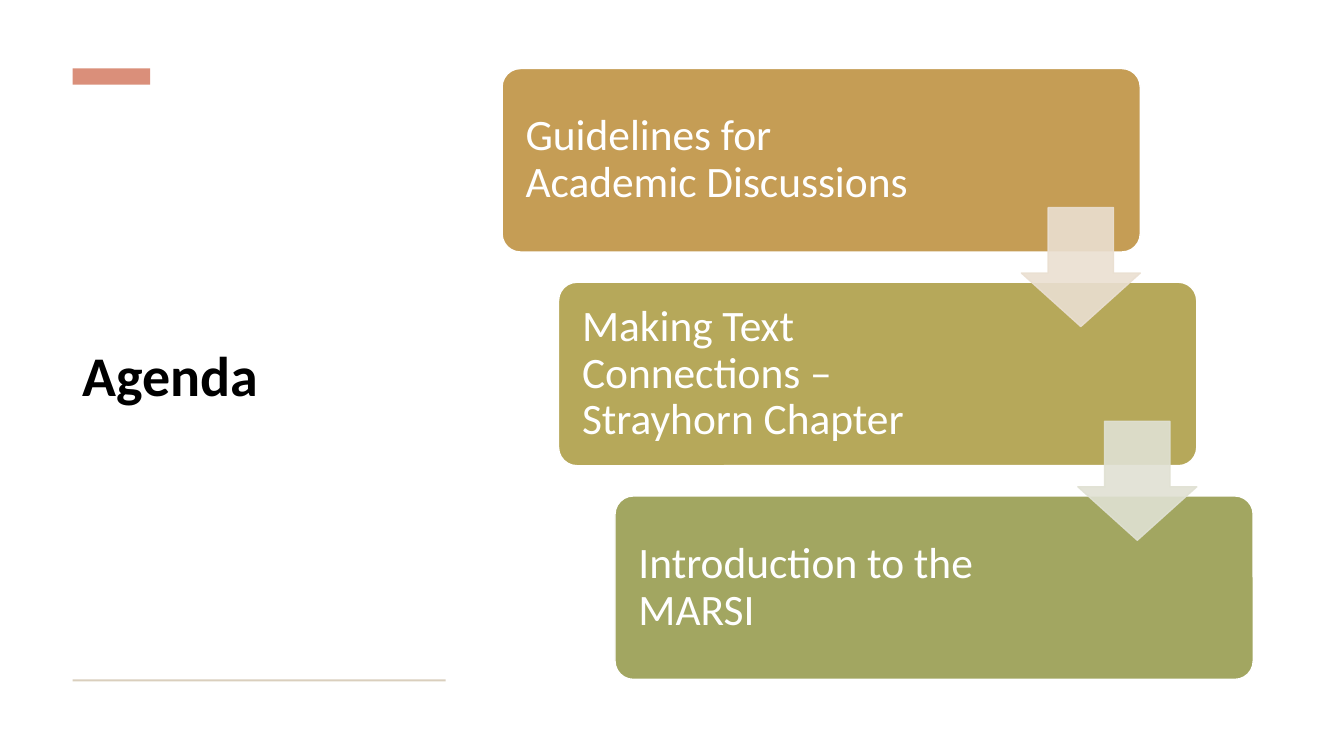
from lxml import etree
from pptx import Presentation
from pptx.dml.color import RGBColor
from pptx.enum.shapes import MSO_SHAPE
from pptx.enum.text import MSO_ANCHOR, PP_ALIGN
from pptx.oxml.ns import qn
from pptx.util import Inches, Pt

RECTANGLE = MSO_SHAPE.RECTANGLE
ROUNDED = MSO_SHAPE.ROUNDED_RECTANGLE
DOWN_ARROW = MSO_SHAPE.DOWN_ARROW
MIDDLE = MSO_ANCHOR.MIDDLE
LEFT = PP_ALIGN.LEFT

SLIDE_SIZE = (13.33, 7.5)
MARGIN, TOP, COLUMN = 0.72, 0.68, 3.7
TITLE = "Agenda"
TITLE_FORMAT = {"name": "Calibri", "size": Pt(40), "bold": True}
CARD_FORMAT = {"name": "Calibri", "size": Pt(31)}
RULES = [
    ((MARGIN, TOP, 0.77, 0.16), "DA8F7A"),
    ((MARGIN, 6.74, COLUMN, 0.02), "DACFBD"),
]
CARDS = [
    ("Guidelines for Academic Discussions", "C59D55", 4.11),
    ("Making Text Connections – Strayhorn Chapter", "B6A85A", 4.23),
    ("Introduction to the MARSI", "A2A661", 4.23),
]
ARROWS = ["EADFD1", "E0E1D3"]
CARD_LEFT, CARD_WIDTH, CARD_HEIGHT = 4.98, 6.33, 1.82
STEP_X, STEP_Y = 0.56, 2.12
ARROW_LEFT, ARROW_TOP, ARROW_SIZE = 10.13, 2.06, 1.18
TEXT_INSET = 0.18
ARROW_ALPHA = 90


def color(value):
    return RGBColor.from_string(value)


def add_block(slide, kind, box, fill, line=None, adjustments=()):
    shape = slide.shapes.add_shape(kind, *map(Inches, box))
    shape.shadow.inherit = False
    shape.fill.solid()
    shape.fill.fore_color.rgb = color(fill)
    if line:
        shape.line.color.rgb = color(line)
        shape.line.width = Pt(1)
    else:
        shape.line.fill.background()
    for index, value in enumerate(adjustments):
        shape.adjustments[index] = value
    return shape


def write_text(shape, text, text_color, font_format, frame_format):
    frame = shape.text_frame
    frame.word_wrap = True
    frame.vertical_anchor = MIDDLE
    for name, value in frame_format.items():
        setattr(frame, name, value)
    paragraph = frame.paragraphs[0]
    paragraph.text = text
    paragraph.alignment = LEFT
    paragraph.line_spacing = 0.9
    for name, value in font_format.items():
        setattr(paragraph.font, name, value)
    paragraph.font.color.rgb = color(text_color)


def make_translucent(shape, percent):
    for element in shape._element.spPr.iter(qn("a:srgbClr")):
        etree.SubElement(element, qn("a:alpha"), val=str(percent * 1000))


def main():
    """Build the agenda slide with three stepped cards and linking arrows."""
    presentation = Presentation()
    presentation.slide_width, presentation.slide_height = map(Inches, SLIDE_SIZE)
    slide = presentation.slides.add_slide(presentation.slide_layouts[6])

    title = slide.shapes.add_textbox(*map(Inches, (MARGIN, 1.05, COLUMN, 5.41)))
    write_text(title, TITLE, "000000", TITLE_FORMAT, {})
    for box, fill in RULES:
        add_block(slide, RECTANGLE, box, fill)

    for index, (text, fill, text_width) in enumerate(CARDS):
        box = (CARD_LEFT + index * STEP_X, TOP + index * STEP_Y, CARD_WIDTH, CARD_HEIGHT)
        card = add_block(slide, ROUNDED, box, fill, "FFFFFF", (0.1,))
        insets = {
            "margin_left": Inches(TEXT_INSET),
            "margin_right": Inches(CARD_WIDTH - TEXT_INSET - text_width),
        }
        write_text(card, text, "FFFFFF", CARD_FORMAT, insets)

    for index, fill in enumerate(ARROWS):
        box = (ARROW_LEFT + index * STEP_X, ARROW_TOP + index * STEP_Y, ARROW_SIZE, ARROW_SIZE)
        arrow = add_block(slide, DOWN_ARROW, box, fill, fill, (0.55, 0.45))
        make_translucent(arrow, ARROW_ALPHA)

    presentation.save("out.pptx")


if __name__ == "__main__":
    main()
